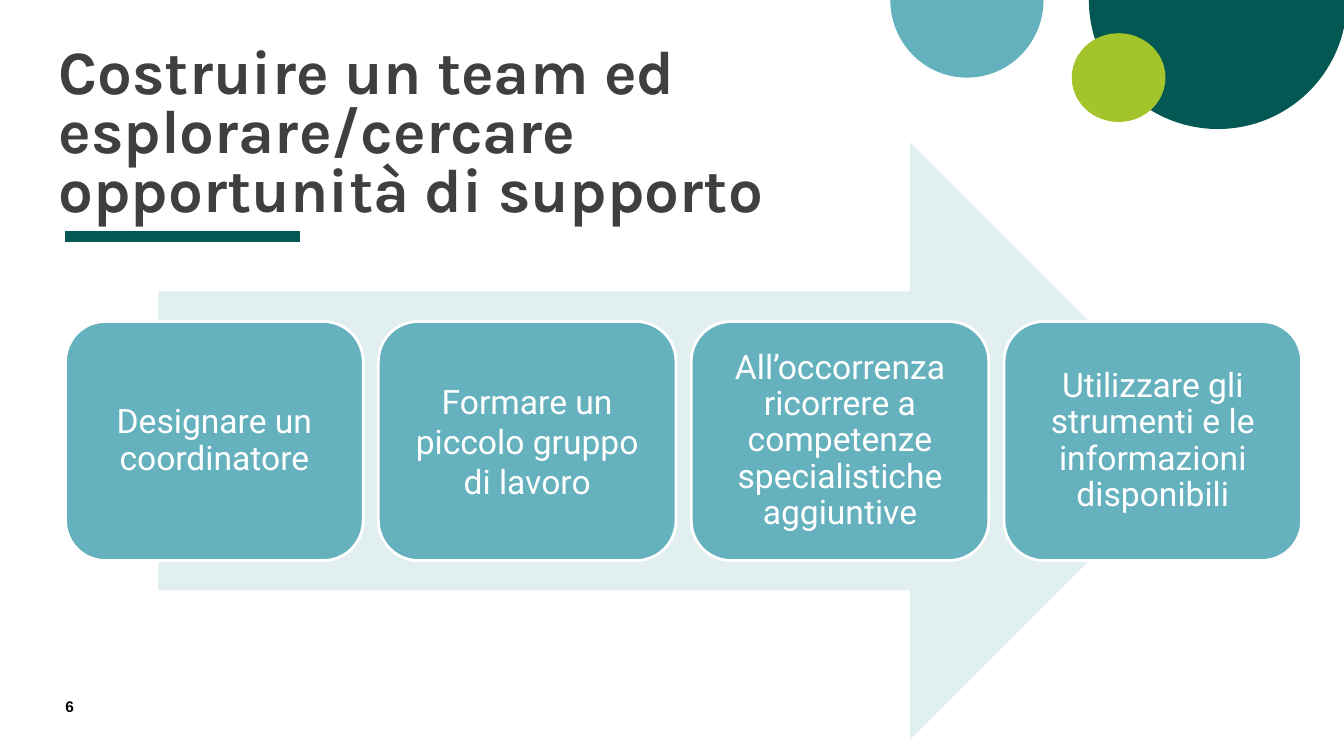
from pptx import Presentation
from pptx import util as u
from pptx.dml.color import RGBColor
from pptx.enum import shapes, text
from pptx.oxml.ns import qn
from lxml import etree

Inches = u.Inches
SHAPE = shapes.MSO_SHAPE
DARK_GREEN, TEAL, LIME = "035854", "64B1BE", "A3C42A"
STEP_FILL, ARROW_FILL, WHITE = "65B1BE", "E1EFF1", "FFFFFF"
STEPS = [
    ("Designare un coordinatore", 0.9),
    ("Formare un piccolo gruppo di lavoro", 1.0),
    ("All’occorrenza ricorrere a competenze specialistiche aggiuntive", 0.9),
    ("Utilizzare gli strumenti e le informazioni disponibili", 0.9),
]


def color(hex_value):
    return RGBColor.from_string(hex_value)


def add_filled(slide, kind, left, top, width, height, fill):
    shape = slide.shapes.add_shape(
        kind, Inches(left), Inches(top), Inches(width), Inches(height))
    shape.shadow.inherit = False
    shape.fill.solid()
    shape.fill.fore_color.rgb = color(fill)
    shape.line.fill.background()
    return shape


def set_insets(frame, inset):
    frame.margin_left = frame.margin_right = Inches(inset)
    frame.margin_top = frame.margin_bottom = Inches(inset)


def format_text(frame, font_name, size, hex_value, bold=False):
    for run in frame.paragraphs[0].runs:
        run.font.name = font_name
        run.font.size = u.Pt(size)
        run.font.bold = bold
        run.font.color.rgb = color(hex_value)


def add_circles(slide, left, top):
    """Half discs hanging from the top edge, with a small disc in front."""
    half_discs = [(1.97, -1.28, 2.56, 2.56, DARK_GREEN),
                  (0, -0.77, 1.52, 1.54, TEAL)]
    for dx, dy, width, height, fill in half_discs:
        disc = add_filled(slide, SHAPE.PIE, left + dx, top + dy, width, height, fill)
        disc.adjustments[0] = 0
        disc.adjustments[1] = 108  # 180 degrees
    add_filled(slide, SHAPE.OVAL, left + 1.8, top + 0.33, 0.93, 0.88, LIME)


def add_heading(slide, left, top, width, height):
    """Title with a short thick rule below it."""
    title = slide.shapes.title
    title.left, title.top = Inches(left), Inches(top)
    title.width, title.height = Inches(width), Inches(height)
    frame = title.text_frame
    frame.text = "Costruire un team ed esplorare/cercare opportunità di supporto"
    frame.word_wrap = True
    frame.auto_size = text.MSO_AUTO_SIZE.NONE
    frame.vertical_anchor = text.MSO_ANCHOR.BOTTOM
    set_insets(frame, 0)
    frame.paragraphs[0].alignment = text.PP_ALIGN.LEFT
    frame.paragraphs[0].line_spacing = 0.8
    format_text(frame, "Karla", 44, "3F3F3F", bold=True)

    rule_left, rule_y = Inches(left + 0.07), Inches(top + height + 0.12)
    rule = slide.shapes.add_connector(
        shapes.MSO_CONNECTOR.STRAIGHT,
        rule_left, rule_y, rule_left + Inches(2.33), rule_y)
    rule.line.color.rgb = color(DARK_GREEN)
    rule.line.width = u.Pt(8)
    etree.SubElement(rule._element.spPr, qn("a:effectLst"))


def add_process(slide, left, top, width, height):
    """Equal steps in a row over a wide arrow."""
    arrow_width = width * 0.85
    add_filled(slide, SHAPE.RIGHT_ARROW, left + (width - arrow_width) / 2, top,
               arrow_width, height, ARROW_FILL)

    gap, step_height = 0.15, height * 0.4
    step_width = (width - gap * (len(STEPS) - 1)) / len(STEPS)
    for index, (wording, spacing) in enumerate(STEPS):
        step = add_filled(slide, SHAPE.ROUNDED_RECTANGLE,
                          left + index * (step_width + gap),
                          top + (height - step_height) / 2,
                          step_width, step_height, STEP_FILL)
        step.line.color.rgb = color(WHITE)
        step.line.width = u.Pt(2)
        frame = step.text_frame
        frame.text = wording
        frame.word_wrap = True
        frame.vertical_anchor = text.MSO_ANCHOR.MIDDLE
        set_insets(frame, 0.12)
        frame.paragraphs[0].alignment = text.PP_ALIGN.CENTER
        frame.paragraphs[0].line_spacing = spacing
        format_text(frame, "Roboto", 24, WHITE)


def add_page_number(slide, left, top, width, height):
    number = slide.shapes.add_textbox(
        Inches(left), Inches(top), Inches(width), Inches(height))
    frame = number.text_frame
    frame.text = "6"
    frame.word_wrap = True
    set_insets(frame, 0)
    format_text(frame, "Arial", 11, "000000", bold=True)


def main():
    deck = Presentation()
    deck.slide_width, deck.slide_height = Inches(13.33), Inches(7.5)
    slide = deck.slides.add_slide(deck.slide_layouts[5])

    # Decoration and heading
    add_circles(slide, 8.83, 0)
    add_heading(slide, 0.58, 0.17, 8.72, 2.06)

    # Process and page number
    add_process(slide, 0.65, 1.41, 12.26, 5.93)
    add_page_number(slide, 0.65, 6.92, 0.57, 0.27)

    deck.save("out.pptx")


if __name__ == "__main__":
    main()
